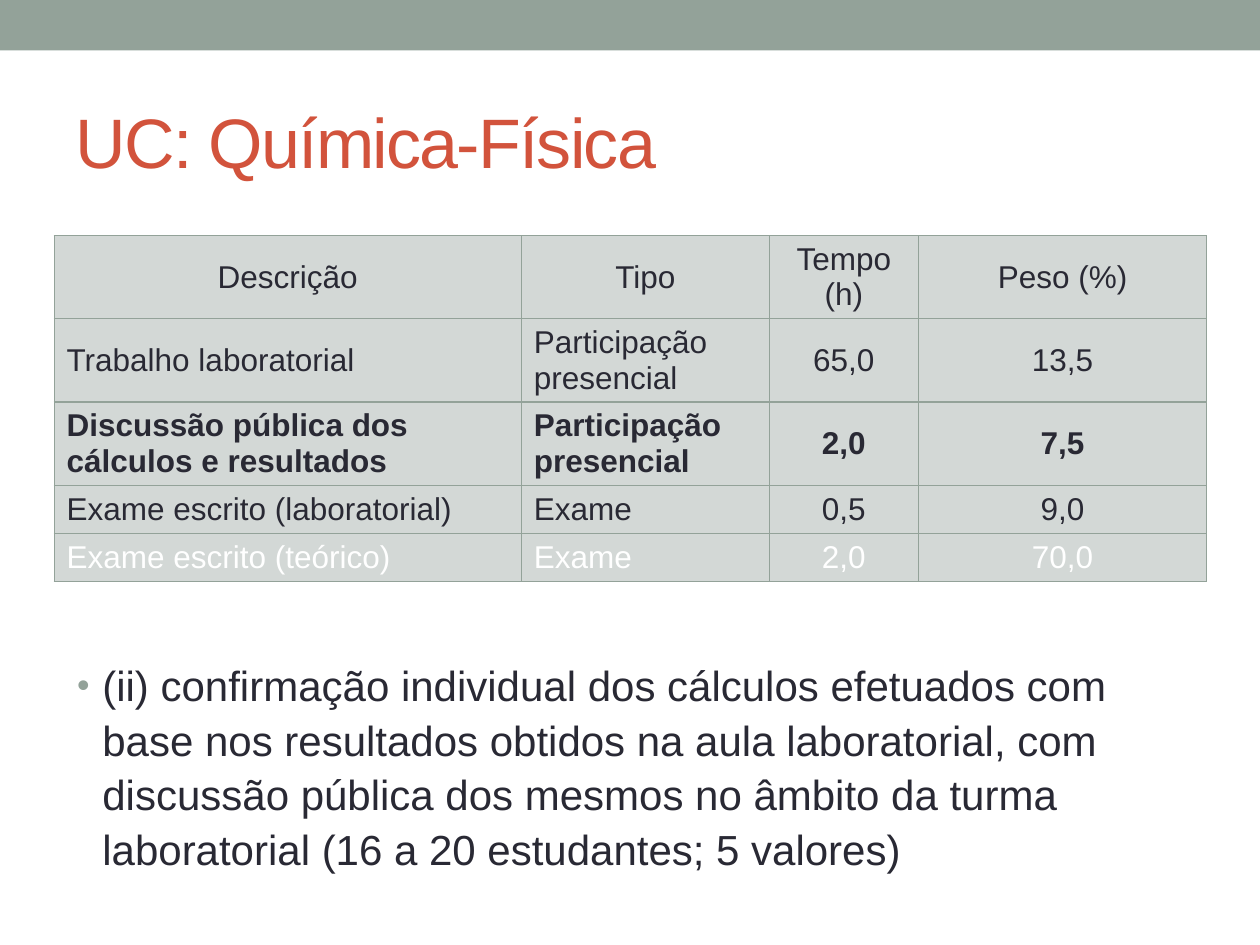
from lxml import etree
from pptx import Presentation
from pptx import util as u
from pptx.dml.color import RGBColor
from pptx.enum import shapes, text
from pptx.oxml import ns

SAGE = RGBColor(0x93, 0xA2, 0x99)
PALE_SAGE = RGBColor(0xD3, 0xD8, 0xD6)
RUST = RGBColor(0xD2, 0x53, 0x3C)
INK = RGBColor(0x29, 0x29, 0x34)
WHITE = RGBColor(0xFF, 0xFF, 0xFF)

HEADER = ("Descrição", "Tipo", "Tempo (h)", "Peso (%)")
ASSESSMENTS = (
    ("Trabalho laboratorial", "Participação presencial", "65,0", "13,5"),
    ("Discussão pública dos cálculos e resultados", "Participação presencial", "2,0", "7,5"),
    ("Exame escrito (laboratorial)", "Exame", "0,5", "9,0"),
    ("Exame escrito (teórico)", "Exame", "2,0", "70,0"),
)
HIGHLIGHTED_ROW = 2
WHITE_ROW = 4
COLUMN_WIDTHS = (9.42, 5, 3, 5.82)
ROW_HEIGHTS = (1.67, 1.67, 1.67, 0.97, 0.97)
EXPLANATION = (
    "(ii) confirmação individual dos cálculos efetuados com base nos resultados "
    "obtidos na aula laboratorial, com discussão pública dos mesmos no âmbito da "
    "turma laboratorial (16 a 20 estudantes; 5 valores)"
)


def place(shape, left, top, width, height):
    """Move and size a shape, in centimetres."""
    shape.left, shape.top = u.Cm(left), u.Cm(top)
    shape.width, shape.height = u.Cm(width), u.Cm(height)


def set_font(paragraph, size, color, bold=False):
    """Format the whole paragraph in Arial."""
    font = paragraph.font
    font.name, font.size, font.bold = "Arial", u.Pt(size), bold
    font.color.rgb = color


def add_band(slide, width):
    """Draw the coloured band along the top, behind everything else."""
    band = slide.shapes.add_shape(
        shapes.MSO_SHAPE.RECTANGLE, 0, 0, width, u.Cm(1.02))
    band.shadow.inherit = False
    band.fill.solid()
    band.fill.fore_color.rgb = SAGE
    band.line.fill.background()
    slide.shapes._spTree.insert(2, band._element)


def fill_title(title):
    """Write the title with slightly tightened letters."""
    place(title, 1.27, 1.47, 22.86, 2.74)
    title.text_frame.vertical_anchor = text.MSO_ANCHOR.MIDDLE
    paragraph = title.text_frame.paragraphs[0]
    paragraph.alignment = text.PP_ALIGN.LEFT
    run = paragraph.add_run()
    run.text = "UC: Química-Física"
    set_font(paragraph, 40, RUST)
    run._r.get_or_add_rPr().set("spc", "-100")


def add_bullet(paragraph):
    """Give the paragraph a small coloured bullet with a hanging indent."""
    properties = paragraph._p.get_or_add_pPr()
    properties.set("marL", str(u.Cm(0.51)))
    properties.set("indent", str(-u.Cm(0.51)))
    color = etree.SubElement(properties, ns.qn("a:buClr"))
    etree.SubElement(color, ns.qn("a:srgbClr"), val=str(SAGE))
    etree.SubElement(properties, ns.qn("a:buSzPct"), val="85000")
    etree.SubElement(properties, ns.qn("a:buFont"), typeface="Arial")
    etree.SubElement(properties, ns.qn("a:buChar"), char="•")


def fill_body(body):
    """Write the explanation in the part of the body below the table."""
    place(body, 1.3, 10.72, 23.01, 7.29)
    frame = body.text_frame
    frame.margin_top = u.Cm(2.5)
    frame.vertical_anchor = text.MSO_ANCHOR.TOP
    paragraph = frame.paragraphs[0]
    paragraph.text = EXPLANATION
    paragraph.line_spacing = 1.08
    paragraph.space_before = u.Pt(0)
    add_bullet(paragraph)
    set_font(paragraph, 24, INK)


def add_borders(cell):
    """Outline a cell on its four sides."""
    properties = cell._tc.get_or_add_tcPr()
    for position, side in enumerate(("lnL", "lnR", "lnT", "lnB")):
        line = etree.Element(ns.qn(f"a:{side}"), w=str(u.Pt(0.75)))
        fill = etree.SubElement(line, ns.qn("a:solidFill"))
        etree.SubElement(fill, ns.qn("a:srgbClr"), val=str(SAGE))
        properties.insert(position, line)


def fill_cell(cell, wording, centered, color, bold):
    """Write and format one table cell."""
    cell.fill.solid()
    cell.fill.fore_color.rgb = PALE_SAGE
    cell.vertical_anchor = text.MSO_ANCHOR.MIDDLE
    paragraph = cell.text_frame.paragraphs[0]
    paragraph.text = wording
    paragraph.alignment = text.PP_ALIGN.CENTER if centered else text.PP_ALIGN.LEFT
    set_font(paragraph, 18, color, bold)
    add_borders(cell)


def add_assessment_table(slide):
    """Add the table of assessment elements."""
    rows = (HEADER, *ASSESSMENTS)
    table = slide.shapes.add_table(
        len(rows), len(HEADER), u.Cm(1.09), u.Cm(4.75),
        u.Cm(sum(COLUMN_WIDTHS)), u.Cm(sum(ROW_HEIGHTS))).table
    table.first_row = table.horz_banding = False
    for column, width in zip(table.columns, COLUMN_WIDTHS):
        column.width = u.Cm(width)
    for row_index, (row, height) in enumerate(zip(rows, ROW_HEIGHTS)):
        table.rows[row_index].height = u.Cm(height)
        color = WHITE if row_index == WHITE_ROW else INK
        for column_index, wording in enumerate(row):
            cell = table.cell(row_index, column_index)
            centered = row_index == 0 or column_index >= 2
            fill_cell(cell, wording, centered, color, row_index == HIGHLIGHTED_ROW)
            if row_index == 0:
                cell.margin_left = cell.margin_right = u.Cm(0.1)


def main():
    """Build and save the slide."""
    presentation = Presentation()
    presentation.slide_width, presentation.slide_height = u.Cm(25.4), u.Cm(19.05)
    slide = presentation.slides.add_slide(presentation.slide_layouts[1])
    add_band(slide, presentation.slide_width)
    fill_title(slide.shapes.title)
    fill_body(slide.placeholders[1])
    add_assessment_table(slide)
    presentation.save("out.pptx")


if __name__ == "__main__":
    main()
